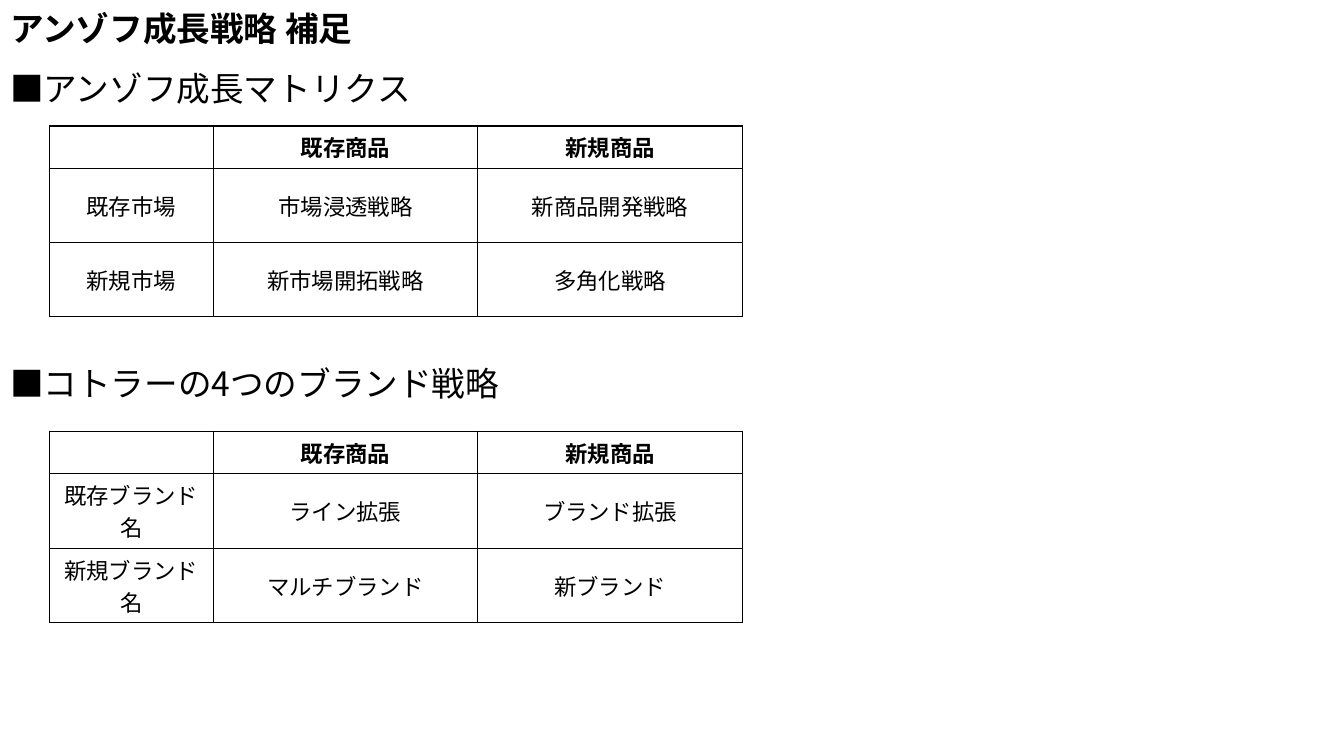
import pptx
import pptx.dml.color
import pptx.enum.lang
import pptx.enum.text
import pptx.oxml.ns
import pptx.util
from lxml import etree

Pt = pptx.util.Pt
ALIGN = pptx.enum.text.PP_ALIGN
ANCHOR = pptx.enum.text.MSO_ANCHOR
qn = pptx.oxml.ns.qn

BLACK = pptx.dml.color.RGBColor(0, 0, 0)
FONT = "Noto Sans CJK JP"
SLIDE_WIDTH = 960
SLIDE_HEIGHT = 540
TITLE_HEIGHT = 43.2
BODY_TOP = 48.24
TABLE_LEFT = 35.28
COLUMN_WIDTHS = [117, 189, 189]
ROW_HEIGHTS = [28, 53, 53]
PRODUCTS = ["", "既存商品", "新規商品"]

MARKET_ROWS = [
    PRODUCTS,
    ["既存市場", "市場浸透戦略", "新商品開発戦略"],
    ["新規市場", "新市場開拓戦略", "多角化戦略"],
]
BRAND_ROWS = [
    PRODUCTS,
    ["既存ブランド名", "ライン拡張", "ブランド拡張"],
    ["新規ブランド名", "マルチブランド", "新ブランド"],
]


def write_text(para, text, size=24, bold=False, align=ALIGN.LEFT, line=1.0, before=0):
    para.alignment = align
    para.line_spacing = line
    para.space_before = Pt(before)
    if not text:
        etree.SubElement(para._p, qn("a:endParaRPr"), sz=str(size * 100))
        return
    span = para.add_run()
    span.text = text
    span.font.name = FONT
    span.font.size = Pt(size)
    span.font.bold = bold
    span.font.color.rgb = BLACK
    span.font.language_id = pptx.enum.lang.MSO_LANGUAGE_ID.JAPANESE
    etree.SubElement(span._r.rPr, qn("a:ea"), typeface=FONT)


def place(box, top, height, anchor):
    box.left, box.top = Pt(0), Pt(top)
    box.width, box.height = Pt(SLIDE_WIDTH), Pt(height)
    frame = box.text_frame
    frame.word_wrap = True
    frame.auto_size = pptx.enum.text.MSO_AUTO_SIZE.NONE
    frame.vertical_anchor = anchor
    return frame


def remove_bullet(para):
    properties = para._p.get_or_add_pPr()
    properties.set("marL", "0")
    properties.set("indent", "0")
    etree.SubElement(properties, qn("a:buNone"))


def add_headings(frame, headings):
    for index, (text, before) in enumerate(headings):
        para = frame.add_paragraph() if index else frame.paragraphs[0]
        write_text(para, text, line=0.9, before=before)
        remove_bullet(para)


def draw_borders(cell):
    properties = cell._tc.get_or_add_tcPr()
    for side in ("lnL", "lnR", "lnT", "lnB"):
        border = etree.SubElement(properties, qn("a:" + side), w=str(Pt(1)))
        fill = etree.SubElement(border, qn("a:solidFill"))
        etree.SubElement(fill, qn("a:srgbClr"), val=str(BLACK))


def add_matrix(page, top, rows):
    frame = page.shapes.add_table(
        len(rows), len(COLUMN_WIDTHS), Pt(TABLE_LEFT), Pt(top),
        Pt(sum(COLUMN_WIDTHS)), Pt(sum(ROW_HEIGHTS)))
    table = frame.table
    table.first_row = False
    table.horz_banding = False
    for column, width in zip(table.columns, COLUMN_WIDTHS):
        column.width = Pt(width)
    for row_index, texts in enumerate(rows):
        table.rows[row_index].height = Pt(ROW_HEIGHTS[row_index])
        header = row_index == 0
        for column_index, text in enumerate(texts):
            cell = table.cell(row_index, column_index)
            cell.vertical_anchor = ANCHOR.TOP if header else ANCHOR.MIDDLE
            draw_borders(cell)
            cell.fill.background()
            write_text(cell.text_frame.paragraphs[0], text,
                       size=16, bold=header, align=ALIGN.CENTER)


def main():
    deck = pptx.Presentation()
    deck.slide_width = Pt(SLIDE_WIDTH)
    deck.slide_height = Pt(SLIDE_HEIGHT)
    page = deck.slides.add_slide(deck.slide_layouts[1])

    title = place(page.shapes.title, 0, TITLE_HEIGHT, ANCHOR.MIDDLE)
    write_text(title.paragraphs[0], "アンゾフ成長戦略 補足", bold=True, line=0.9)

    body = place(page.placeholders[1], BODY_TOP, SLIDE_HEIGHT - BODY_TOP, ANCHOR.TOP)
    add_headings(body, [("■アンゾフ成長マトリクス", 10),
                        ("■コトラーの4つのブランド戦略", 184.5)])

    add_matrix(page, 90, MARKET_ROWS)
    add_matrix(page, 308, BRAND_ROWS)
    deck.save("out.pptx")


if __name__ == "__main__":
    main()
